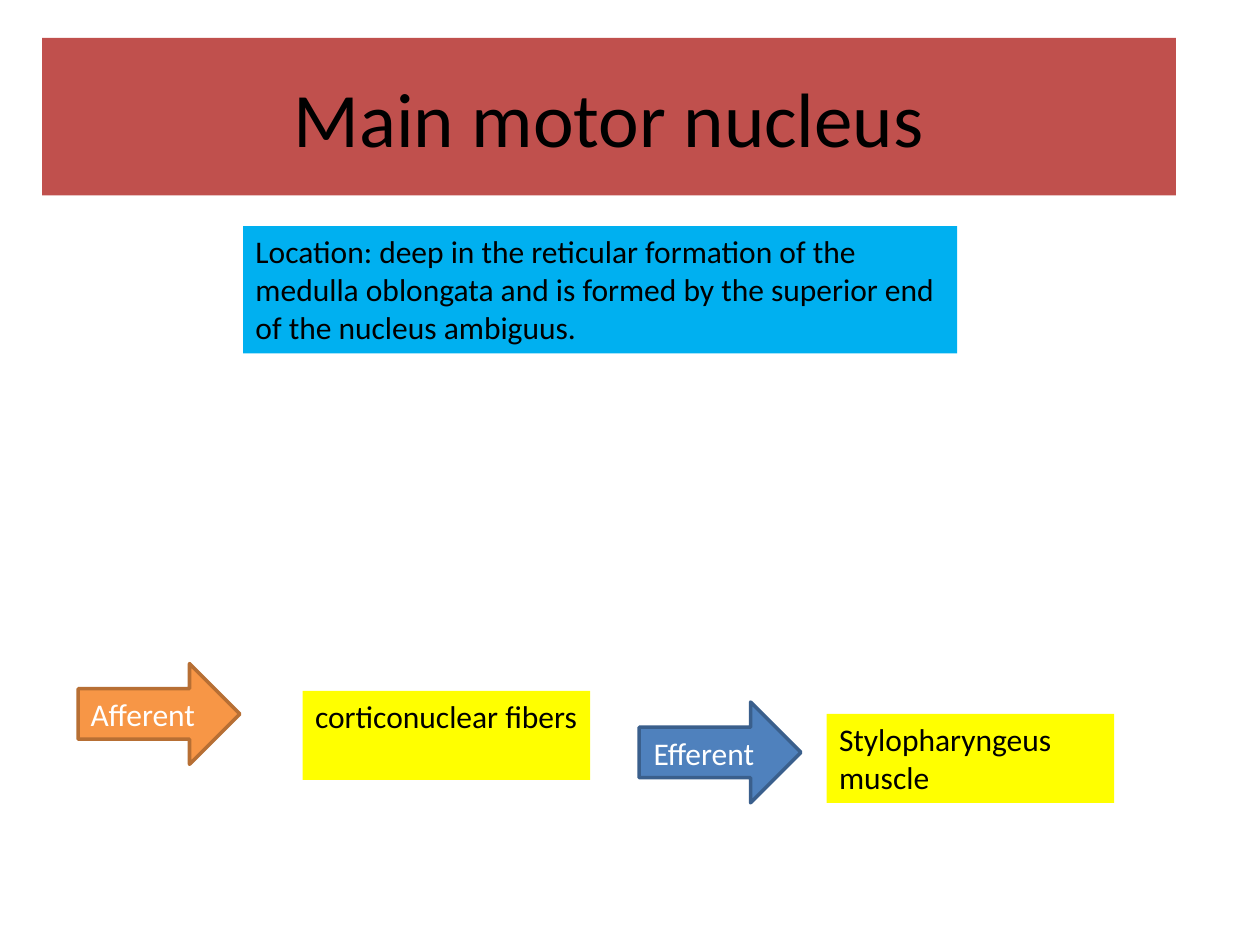
from pptx import Presentation
from pptx.dml.color import RGBColor
from pptx.enum.shapes import MSO_SHAPE as Shape
from pptx.enum.text import MSO_ANCHOR as Anchor, MSO_AUTO_SIZE as AutoSize, PP_ALIGN as Align
from pptx.util import Pt

BLACK = RGBColor(0x00, 0x00, 0x00)
WHITE = RGBColor(0xFF, 0xFF, 0xFF)
RED = RGBColor(0xC0, 0x50, 0x4D)
SKY = RGBColor(0x00, 0xB0, 0xF0)
YELLOW = RGBColor(0xFF, 0xFF, 0x00)
ORANGE = RGBColor(0xF7, 0x96, 0x46)
DARK_ORANGE = RGBColor(0xB7, 0x6F, 0x34)
BLUE = RGBColor(0x4F, 0x81, 0xBD)
DARK_BLUE = RGBColor(0x3A, 0x5F, 0x8C)


def fill_shape(shape, color):
    shape.fill.solid()
    shape.fill.fore_color.rgb = color


def write(shape, text, size, color, align, anchor):
    frame = shape.text_frame
    frame.word_wrap = True
    frame.vertical_anchor = anchor
    para = frame.paragraphs[0]
    para.alignment = align
    span = para.add_run()
    span.text = text
    span.font.name = "Calibri"
    span.font.size = Pt(size)
    span.font.color.rgb = color


deck = Presentation()
deck.slide_width, deck.slide_height = Pt(720), Pt(540)
page = deck.slides.add_slide(deck.slide_layouts[5])

# Title band
title = page.shapes.title
title.left, title.top, title.width, title.height = Pt(24), Pt(21.6), Pt(648), Pt(90)
fill_shape(title, RED)
write(title, "Main motor nucleus", 44, BLACK, Align.CENTER, Anchor.MIDDLE)

# Location and the two pathway notes
notes = [
    (138.9, 129.2, 408, 72.7, SKY,
     "Location: deep in the reticular formation of the medulla oblongata "
     "and is formed by the superior end of the nucleus ambiguus."),
    (173, 394.8, 164.3, 50.9, YELLOW, "corticonuclear fibers"),
    (472.4, 408, 164.3, 50.9, YELLOW, "Stylopharyngeus muscle"),
]
for left, top, width, height, color, text in notes:
    box = page.shapes.add_textbox(Pt(left), Pt(top), Pt(width), Pt(height))
    fill_shape(box, color)
    write(box, text, 18, BLACK, Align.LEFT, Anchor.TOP)
    box.text_frame.auto_size = AutoSize.NONE

# Pathway arrows
arrows = [
    (44.6, 379.2, ORANGE, DARK_ORANGE, "Afferent "),
    (365.2, 401.2, BLUE, DARK_BLUE, "Efferent "),
]
for left, top, color, edge, text in arrows:
    arrow = page.shapes.add_shape(Shape.RIGHT_ARROW, Pt(left), Pt(top), Pt(92.5), Pt(57.6))
    arrow.shadow.inherit = False
    fill_shape(arrow, color)
    arrow.line.color.rgb = edge
    arrow.line.width = Pt(2)
    write(arrow, text, 18, WHITE, Align.CENTER, Anchor.MIDDLE)

deck.save("out.pptx")
